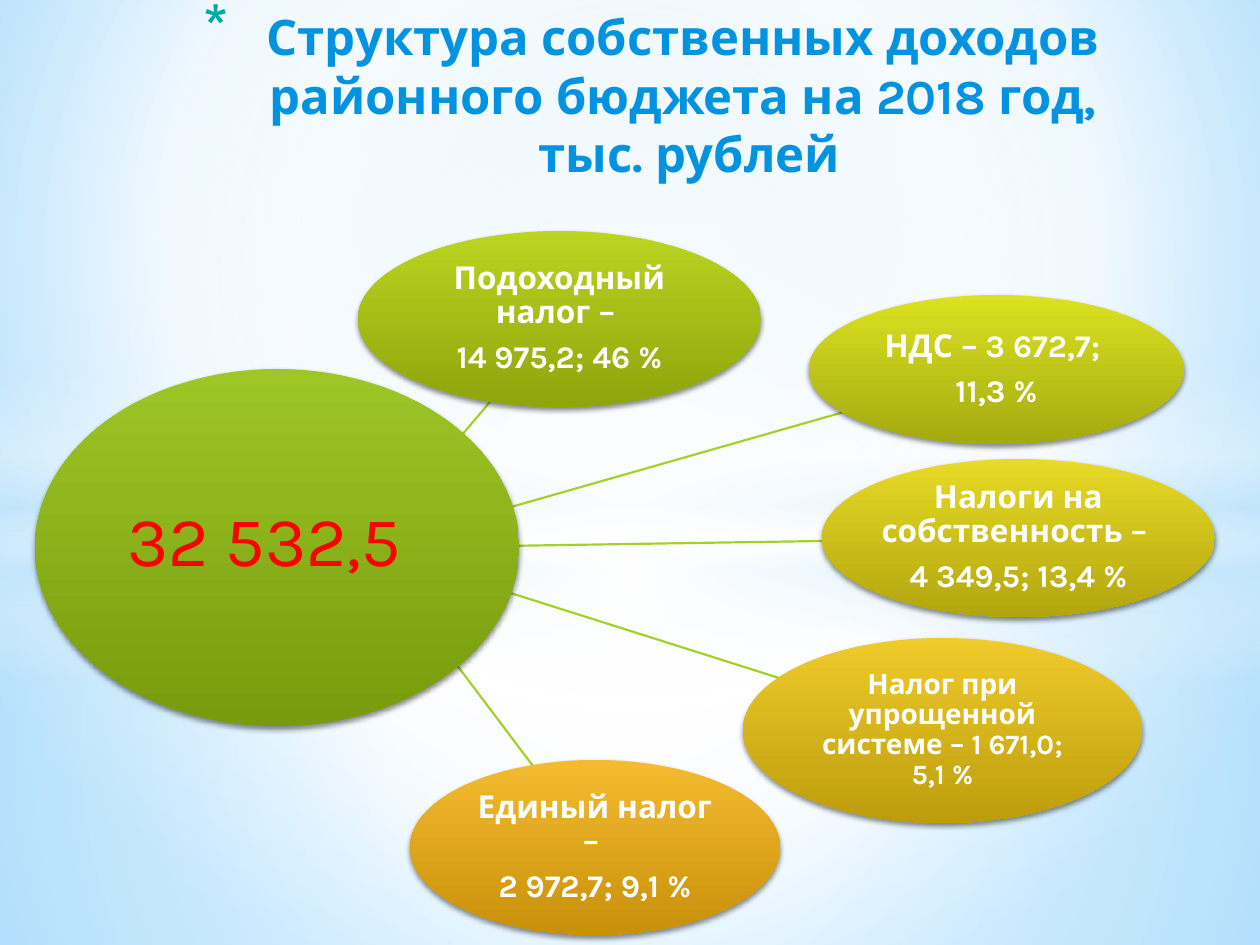
from lxml import etree
from pptx import Presentation
from pptx.dml.color import RGBColor
from pptx.enum.shapes import MSO_CONNECTOR, MSO_SHAPE
from pptx.enum.text import MSO_ANCHOR, MSO_AUTO_SIZE, PP_ALIGN
from pptx.oxml.ns import qn
from pptx.util import Emu, Pt

PX = 914400 // 126
FONT = "Karla"
WHITE = RGBColor(0xFF, 0xFF, 0xFF)
BLACK = RGBColor(0x00, 0x00, 0x00)
PALE = RGBColor(0xC6, 0xE7, 0xFC)
SKY_LIGHT = RGBColor(0xB0, 0xE0, 0xFF)
SKY = RGBColor(0x6B, 0xC5, 0xFF)
TITLE_BLUE = RGBColor(0x02, 0x93, 0xE0)
TEAL = RGBColor(0x04, 0xA8, 0xA4)
RED = RGBColor(0xFF, 0x00, 0x00)
LINE_GREEN = RGBColor(0xA5, 0xD0, 0x28)

# Box in px, (top, bottom) colours
TOTAL = ((35, 369, 484, 357), (RGBColor(0x9D, 0xC6, 0x26), RGBColor(0x77, 0x9B, 0x0D)))

# Box, colours, text size, paragraphs, spoke start and end
TAXES = [
    ((358, 231, 403, 176), (RGBColor(0xBB, 0xD5, 0x22), RGBColor(0x8E, 0xA5, 0x0C)), 18,
     ["Подоходный налог – ", "14 975,2; 46 %"], (428, 475, 490, 402)),
    ((809, 295, 375, 149), (RGBColor(0xDB, 0xE2, 0x21), RGBColor(0xA4, 0xAA, 0x0F)), 18,
     ["НДС – 3 672,7; ", "11,3 %"], (441, 527, 844, 412)),
    ((822, 459, 393, 158), (RGBColor(0xE8, 0xDA, 0x26), RGBColor(0xB2, 0xA6, 0x0F)), 18,
     ["Налоги на собственность – ", "4 349,5; 13,4 %"], (441, 547, 823, 541)),
    ((743, 638, 399, 185), (RGBColor(0xEF, 0xCB, 0x2B), RGBColor(0xBD, 0x9D, 0x0C)), 16,
     ["Налог при упрощенной системе – 1 671,0; 5,1 %"], (441, 571, 779, 678)),
    ((410, 760, 370, 175), (RGBColor(0xF4, 0xBB, 0x31), RGBColor(0xC9, 0x91, 0x09)), 18,
     ["Единый налог – ", "2 972,7; 9,1 %"], (423, 620, 533, 766)),
]

CENTRE = (50, 50, 50, 50)
# Box, shape, gradient stops (position, colour, opacity), focus or None for vertical
GLOWS = [
    ((0, 533, 1260, 412), MSO_SHAPE.RECTANGLE,
     [(0, WHITE, 91), (37, WHITE, 76), (100, PALE, 79)], CENTRE),
    ((0, 0, 1260, 533), MSO_SHAPE.RECTANGLE,
     [(0, WHITE, 89), (48, WHITE, 62), (100, PALE, 79)], CENTRE),
    ((0, 365, 1260, 315), MSO_SHAPE.RECTANGLE,
     [(0, WHITE, 0), (29, WHITE, 30), (45, PALE, 40), (55, WHITE, 26),
      (65, PALE, 60), (100, WHITE, 0)], None),
    ((0, 221, 1260, 703), MSO_SHAPE.OVAL, [(0, WHITE, 100), (54, WHITE, 0)], CENTRE),
]


def px(*values):
    return [Emu(value * PX) for value in values]


def add_child(parent, tag, **attributes):
    child = etree.SubElement(parent, qn(tag))
    for name, value in attributes.items():
        child.set(name, str(value))
    return child


def add_color(parent, color, opacity=100):
    element = add_child(parent, "a:srgbClr", val=color)
    if opacity < 100:
        add_child(element, "a:alpha", val=opacity * 1000)


def set_gradient(fill, owner, stops, focus=None):
    """Replace the fill of owner with a vertical or a radial gradient."""
    fill.solid()
    solid = owner.find(qn("a:solidFill"))
    gradient = etree.Element(qn("a:gradFill"), rotWithShape="1")
    stop_list = add_child(gradient, "a:gsLst")
    for position, color, opacity in stops:
        add_color(add_child(stop_list, "a:gs", pos=position * 1000), color, opacity)
    if focus:
        radial = add_child(gradient, "a:path", path="circle")
        sides = {side: value * 1000 for side, value in zip("ltrb", focus)}
        add_child(radial, "a:fillToRect", **sides)
    else:
        add_child(gradient, "a:lin", ang=5400000, scaled=0)
    owner.replace(solid, gradient)


def add_gradient_shape(slide, kind, box, stops, focus=None):
    shape = slide.shapes.add_shape(kind, *px(*box))
    shape.shadow.inherit = False
    shape.line.fill.background()
    set_gradient(shape.fill, shape.element.spPr, stops, focus)
    return shape


def add_bubble(slide, box, colors):
    top, bottom = colors
    bubble = add_gradient_shape(slide, MSO_SHAPE.OVAL, box, [(0, top, 100), (100, bottom, 100)])
    effects = bubble.element.spPr.find(qn("a:effectLst"))
    shadow = add_child(effects, "a:outerShdw", blurRad=Pt(3.1), dist=Pt(1.8),
                       dir=5400000, rotWithShape=0)
    add_color(shadow, BLACK, 45)
    return bubble


def add_spoke(slide, ends):
    spoke = slide.shapes.add_connector(MSO_CONNECTOR.STRAIGHT, *px(*ends))
    spoke.line.color.rgb = LINE_GREEN
    spoke.line.width = Pt(1.25)
    add_child(spoke.element.spPr, "a:effectLst")


def format_runs(paragraph, size, color, bold):
    for run in paragraph.runs:
        run.font.name = FONT
        run.font.size = Pt(size)
        run.font.bold = bold
        run.font.color.rgb = color


def label_bubble(bubble, lines, size):
    frame = bubble.text_frame
    frame.text = "\n".join(lines)
    frame.word_wrap = True
    frame.vertical_anchor = MSO_ANCHOR.MIDDLE
    frame.margin_left = frame.margin_right = frame.margin_top = frame.margin_bottom = Pt(1)
    for paragraph in frame.paragraphs:
        paragraph.alignment = PP_ALIGN.CENTER
        paragraph.line_spacing = 0.9
        paragraph.space_after = Pt(round(size * 0.35, 1))
        format_runs(paragraph, size, WHITE, True)


def add_text(slide, box, text, size, color, bold=False):
    frame = slide.shapes.add_textbox(*px(*box)).text_frame
    frame.word_wrap = True
    frame.text = text
    format_runs(frame.paragraphs[0], size, color, bold)
    return frame


def add_title(slide):
    frame = add_text(slide, (64, 0, 1150, 247),
                     "Структура собственных доходов районного бюджета на 2018 год,\v тыс. рублей",
                     28, TITLE_BLUE, True)
    paragraph = frame.paragraphs[0]
    paragraph.alignment = PP_ALIGN.CENTER
    # Asterisk bullet with a hanging indent
    properties = paragraph._p.get_or_add_pPr()
    properties.set("marL", str(88 * PX))
    properties.set("indent", str(-63 * PX))
    add_color(add_child(properties, "a:buClr"), TEAL)
    add_child(properties, "a:buSzPct", val=128000)
    add_child(properties, "a:buChar", char="*")


def main():
    presentation = Presentation()
    presentation.slide_width, presentation.slide_height = px(1260, 945)
    slide = presentation.slides.add_slide(presentation.slide_layouts[6])

    # Sky backdrop
    fill = slide.background.fill
    fill.solid()
    set_gradient(fill, slide.element.find(".//" + qn("p:bgPr")),
                 [(0, SKY_LIGHT, 100), (60, WHITE, 100), (100, SKY, 100)], (20, 10, 20, 60))
    for box, kind, stops, focus in GLOWS:
        add_gradient_shape(slide, kind, box, stops, focus)

    add_title(slide)

    # Spokes lie under the bubbles
    for *_, ends in reversed(TAXES):
        add_spoke(slide, ends)
    add_bubble(slide, *TOTAL)
    for box, colors, size, lines, _ in TAXES:
        label_bubble(add_bubble(slide, box, colors), lines, size)

    # Total revenue
    frame = add_text(slide, (115, 490, 328, 97), "32 532,5", 40, RED)
    frame.auto_size = MSO_AUTO_SIZE.SHAPE_TO_FIT_TEXT

    presentation.save("out.pptx")


if __name__ == "__main__":
    main()
